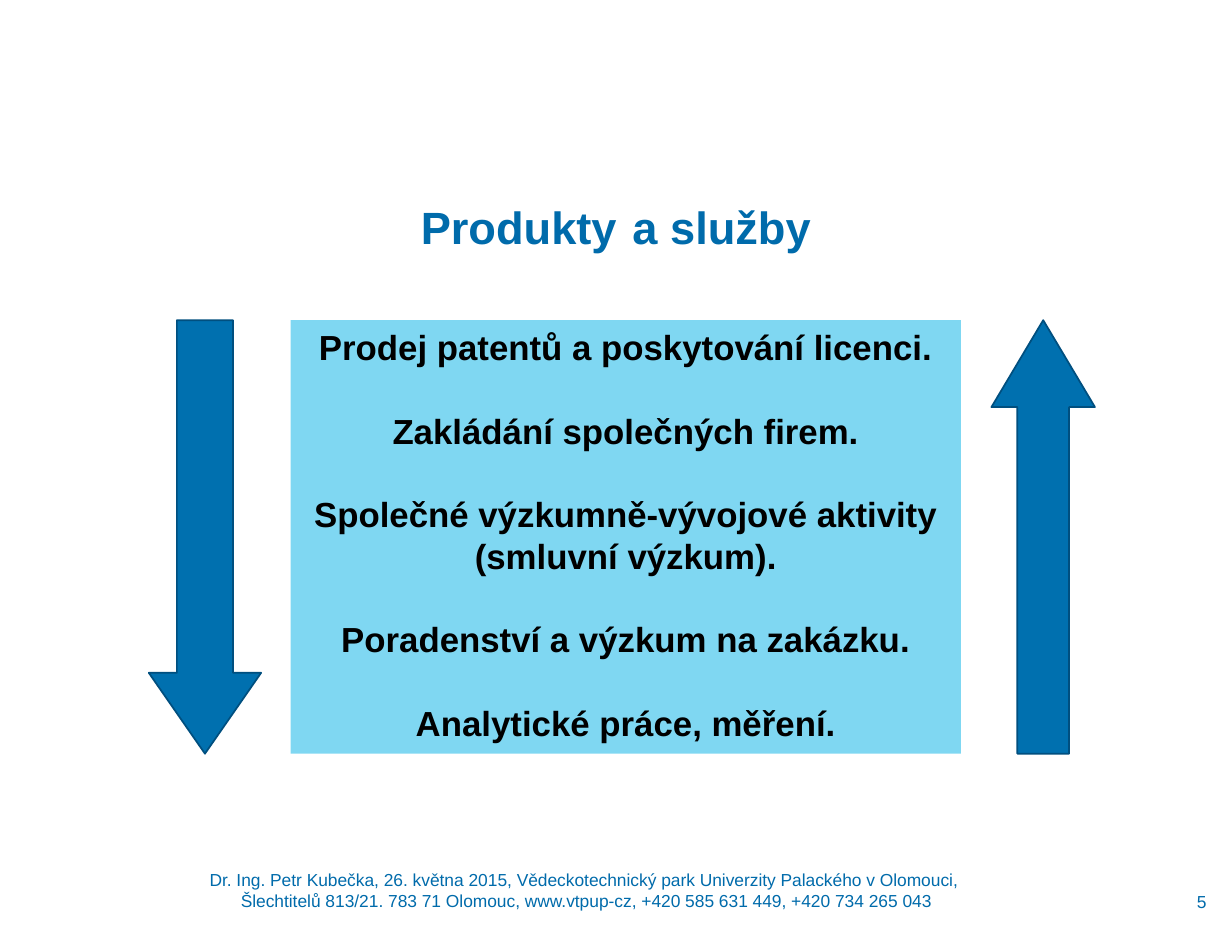
"""Build the slide on products and services with its two arrows."""
from lxml.etree import SubElement
from pptx import Presentation
from pptx.dml.color import RGBColor
from pptx.enum.shapes import MSO_SHAPE
from pptx.enum.text import MSO_ANCHOR, PP_ALIGN
from pptx.oxml.ns import qn
from pptx.util import Pt

PX = 7200
WHITE = RGBColor(0xFF, 0xFF, 0xFF)
BLACK = RGBColor(0x00, 0x00, 0x00)
BLUE = RGBColor(0x00, 0x6B, 0xAB)
ARROW = RGBColor(0x00, 0x70, 0xAF)
EDGE = RGBColor(0x00, 0x4F, 0x7F)
CYAN = RGBColor(0x00, 0xB1, 0xE6)


def place(left, top, width, height):
    return [n * PX for n in (left, top, width, height)]


def style(frame, size, color, bold=False, align=PP_ALIGN.CENTER):
    frame.word_wrap = True
    for para in frame.paragraphs:
        para.alignment = align
        for run in para.runs:
            run.font.name = "Arial"
            run.font.size = Pt(size)
            run.font.bold = bold
            run.font.color.rgb = color


deck = Presentation()
deck.slide_width, deck.slide_height = 1250 * PX, 950 * PX
slide = deck.slides.add_slide(deck.slide_layouts[6])
slide.background.fill.solid()
slide.background.fill.fore_color.rgb = WHITE
shapes = slide.shapes

contact = (
    "Dr. Ing. Petr Kubečka, 26. května 2015, Vědeckotechnický park Univerzity Palackého v Olomouci, \v"
    "Šlechtitelů 813/21. 783 71 Olomouc, www.vtpup-cz, +420 585 631 449, +420 734 265 043"
)
for area, text, anchor, align in (
    ((100, 895, 989, 30), contact, MSO_ANCHOR.BOTTOM, PP_ALIGN.CENTER),
    ((1180, 900, 44, 30), "5", MSO_ANCHOR.MIDDLE, PP_ALIGN.RIGHT),
):
    frame = shapes.add_textbox(*place(*area)).text_frame
    frame.margin_left = frame.margin_right = 0
    frame.margin_top = frame.margin_bottom = 0
    frame.vertical_anchor = anchor
    frame.text = text
    style(frame, 10, BLUE, align=align)

title = shapes.add_textbox(*place(0, 185, 1250, 81)).text_frame
for part in ("Produkty", " ", "a služby"):
    title.paragraphs[0].add_run().text = part
style(title, 26, BLUE, True)
space = title.paragraphs[0].runs[1].font
space.size = Pt(32)
space.color.rgb = ARROW

panel = shapes.add_shape(MSO_SHAPE.RECTANGLE, *place(295, 325, 680, 440))
panel.shadow.inherit = False
panel.fill.solid()
panel.fill.fore_color.rgb = CYAN
tint = panel.fill._xPr.find(".//" + qn("a:srgbClr"))
SubElement(tint, qn("a:alpha")).set("val", "50000")
panel.line.fill.background()
frame = panel.text_frame
frame.vertical_anchor = MSO_ANCHOR.MIDDLE
frame.margin_bottom = 11 * PX
frame.text = "\n".join((
    "Prodej patentů a poskytování licenci.",
    "Zakládání společných firem.",
    "Společné výzkumně-vývojové aktivity (smluvní výzkum).",
    "Poradenství a výzkum na zakázku.",
    "Analytické práce, měření.",
))
style(frame, 20, BLACK, True)
for para in frame.paragraphs[1:]:
    para.space_before = Pt(24)

for kind, left, width, head in (
    (MSO_SHAPE.DOWN_ARROW, 151, 114, 0.72),
    (MSO_SHAPE.UP_ARROW, 1006, 105, 0.84),
):
    arrow = shapes.add_shape(kind, *place(left, 325, width, 440))
    arrow.adjustments[0], arrow.adjustments[1] = 0.5, head
    arrow.shadow.inherit = False
    arrow.fill.solid()
    arrow.fill.fore_color.rgb = ARROW
    arrow.line.color.rgb = EDGE
    arrow.line.width = Pt(1)

deck.save("out.pptx")
